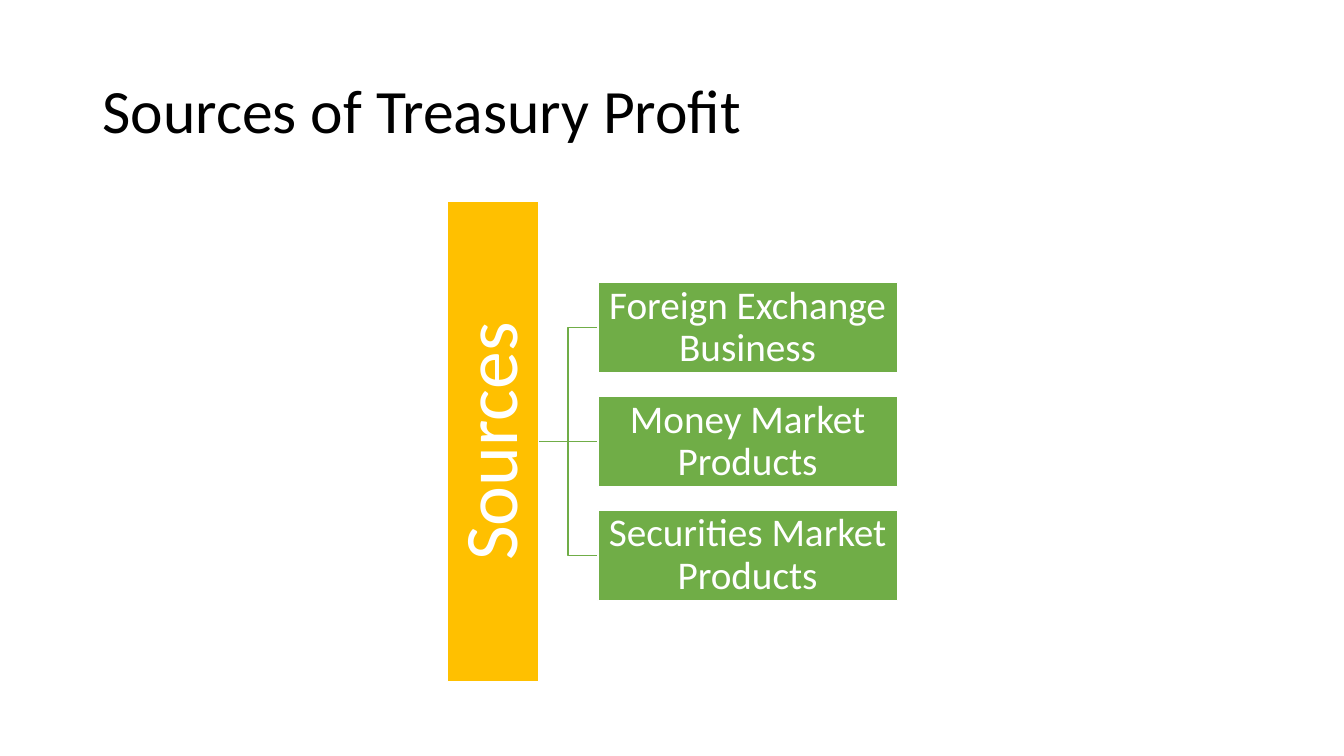
from pptx import Presentation
from pptx import util as u
from pptx.dml.color import RGBColor
from pptx.enum import shapes, text
from pptx.oxml import xmlchemy

# Content
TITLE = "Sources of Treasury Profit"
ROOT = "Sources"
BRANCHES = [
    "Foreign Exchange Business",
    "Money Market Products",
    "Securities Market Products",
]

THEME = {
    "font": "Calibri",
    "black": "000000", "white": "FFFFFF", "root": "FFC000", "branch": "70AD47",
    "title_size": 44, "root_size": 54, "branch_size": 28,
    "line_width": 1,
}

# Layout in inches
MIDDLE = 4.38
BAR_LENGTH, BOX_HEIGHT = 4.76, 0.9
BAR_CENTER = 4.89
BAR_RIGHT = BAR_CENTER + BOX_HEIGHT / 2
BRANCH_LEFT, BRANCH_WIDTH, BRANCH_PITCH = 5.93, 2.97, 1.13


def color(name):
    return RGBColor.from_string(THEME[name])


def write(shape, words, *, size, ink, align, inset_x, inset_y):
    frame = shape.text_frame
    frame.word_wrap = True
    frame.vertical_anchor = text.MSO_ANCHOR.MIDDLE
    frame.margin_left = frame.margin_right = u.Inches(inset_x)
    frame.margin_top = frame.margin_bottom = u.Inches(inset_y)
    paragraph = frame.paragraphs[0]
    paragraph.alignment = align
    paragraph.line_spacing = 0.9
    run = paragraph.add_run()
    run.text = words
    run.font.name = THEME["font"]
    run.font.size = u.Pt(THEME[size])
    run.font.color.rgb = color(ink)


def add_box(slide, words, center_x, center_y, width, *, kind, inset, rotation=0):
    shape = slide.shapes.add_shape(
        shapes.MSO_SHAPE.RECTANGLE,
        u.Inches(center_x - width / 2), u.Inches(center_y - BOX_HEIGHT / 2),
        u.Inches(width), u.Inches(BOX_HEIGHT))
    shape.rotation = rotation
    shape.shadow.inherit = False
    shape.fill.solid()
    shape.fill.fore_color.rgb = color(kind)
    shape.line.color.rgb = color("white")
    shape.line.width = u.Pt(THEME["line_width"])
    write(shape, words, size=f"{kind}_size", ink="white",
          align=text.PP_ALIGN.CENTER, inset_x=inset, inset_y=inset)


def add_link(slide, end_y):
    kind = shapes.MSO_CONNECTOR.STRAIGHT if end_y == MIDDLE else shapes.MSO_CONNECTOR.ELBOW
    link = slide.shapes.add_connector(
        kind, u.Inches(BAR_RIGHT), u.Inches(MIDDLE),
        u.Inches(BRANCH_LEFT), u.Inches(end_y))
    link.line.color.rgb = color("branch")
    link.line.width = u.Pt(THEME["line_width"])
    properties = link._element.spPr
    properties.append(xmlchemy.OxmlElement("a:effectLst"))


def main():
    presentation = Presentation()
    presentation.slide_width = u.Inches(13.33)
    presentation.slide_height = u.Inches(7.5)
    slide = presentation.slides.add_slide(presentation.slide_layouts[6])

    # Title
    title = slide.shapes.add_textbox(
        u.Inches(0.92), u.Inches(0.4), u.Inches(11.5), u.Inches(1.45))
    write(title, TITLE, size="title_size", ink="black",
          align=text.PP_ALIGN.LEFT, inset_x=0.1, inset_y=0.05)

    # Links, behind the boxes
    offset = (len(BRANCHES) - 1) / 2
    centers = [MIDDLE + (row - offset) * BRANCH_PITCH for row in range(len(BRANCHES))]
    for center_y in centers:
        add_link(slide, center_y)

    # Root bar and its branches
    add_box(slide, ROOT, BAR_CENTER, MIDDLE, BAR_LENGTH,
            kind="root", inset=0.04, rotation=270)
    for words, center_y in zip(BRANCHES, centers):
        add_box(slide, words, BRANCH_LEFT + BRANCH_WIDTH / 2, center_y, BRANCH_WIDTH,
                kind="branch", inset=0.02)

    presentation.save("out.pptx")


if __name__ == "__main__":
    main()
